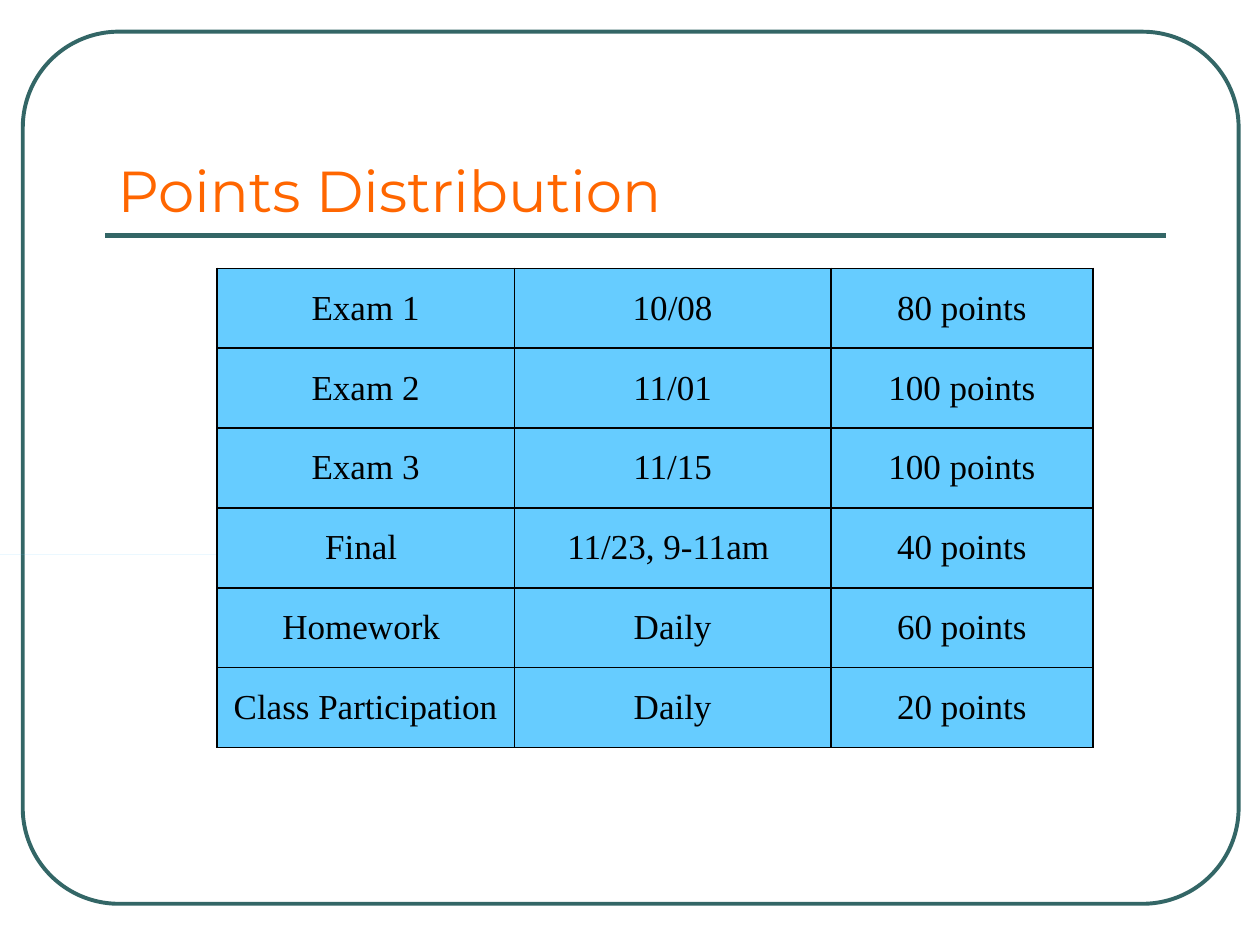
from lxml import etree
from pptx import Presentation
from pptx import util as u
from pptx.dml.color import RGBColor
from pptx.enum import shapes, text
from pptx.oxml.ns import qn

SCORES = [
    ("Exam 1", "10/08", "80 points"),
    ("Exam 2", "11/01", "100 points"),
    ("Exam 3", "11/15", "100 points"),
    ("Final ", "11/23, 9-11am ", "40 points"),
    ("Homework ", "Daily", "60 points"),
    ("Class Participation", "Daily", "20 points"),
]


def colour(hex_code):
    return RGBColor.from_string(hex_code)


class PointsSlide:
    teal, orange, sky, black = "336666", "FF6600", "66CCFF", "000000"
    heading_font, body_font = "Montserrat", "Times New Roman"

    def __init__(self, deck):
        self.slide = deck.slides.add_slide(deck.slide_layouts[6])

    def wording(self, paragraph, words, font, size, hex_code):
        run = paragraph.add_run()
        run.text = words
        run.font.name = font
        run.font.size = u.Pt(size)
        run.font.color.rgb = colour(hex_code)

    def box(self, kind, left, top, width, height):
        outline = self.slide.shapes.add_shape(
            kind, u.Cm(left), u.Cm(top), u.Cm(width), u.Cm(height))
        outline.shadow.inherit = False
        return outline

    def frame(self, left, top, width, height):
        border = self.box(shapes.MSO_SHAPE.ROUNDED_RECTANGLE, left, top, width, height)
        border.adjustments[0] = 0.11
        border.fill.background()
        border.line.color.rgb = colour(self.teal)
        border.line.width = u.Pt(2.25)

    def hairline(self, left, top, width):
        strip = self.box(shapes.MSO_SHAPE.RECTANGLE, left, top, width, 0)
        strip.fill.solid()
        strip.fill.fore_color.rgb = colour(self.sky)
        strip.line.fill.background()

    def rule(self, left, right, y):
        underline = self.slide.shapes.add_connector(
            shapes.MSO_CONNECTOR.STRAIGHT, u.Cm(left), u.Cm(y), u.Cm(right), u.Cm(y))
        underline.line.color.rgb = colour(self.teal)
        underline.line.width = u.Pt(3)
        etree.SubElement(underline._element.spPr, qn("a:effectLst"))

    def title(self, words, left, top, width, height):
        heading = self.slide.shapes.add_textbox(
            u.Cm(left), u.Cm(top), u.Cm(width), u.Cm(height)).text_frame
        heading.word_wrap = True
        heading.vertical_anchor = text.MSO_ANCHOR.BOTTOM
        self.wording(heading.paragraphs[0], words, self.heading_font, 33, self.orange)

    def borders(self, cell):
        properties = cell._tc.get_or_add_tcPr()
        for position, side in enumerate(("lnL", "lnR", "lnT", "lnB")):
            edge = etree.Element(qn(f"a:{side}"), w=str(u.Pt(1)))
            paint = etree.SubElement(edge, qn("a:solidFill"))
            etree.SubElement(paint, qn("a:srgbClr"), val=self.black)
            properties.insert(position, edge)

    def score_cell(self, cell, words):
        cell.fill.solid()
        cell.fill.fore_color.rgb = colour(self.sky)
        cell.vertical_anchor = text.MSO_ANCHOR.MIDDLE
        cell.margin_left = cell.margin_right = 0
        cell.margin_top = cell.margin_bottom = 0
        entry = cell.text_frame.paragraphs[0]
        entry.alignment = text.PP_ALIGN.CENTER
        self.wording(entry, words, self.body_font, 20, self.black)
        self.borders(cell)

    def score_table(self, scores, left, top, widths, row_height):
        grid = self.slide.shapes.add_table(
            len(scores), len(widths), u.Cm(left), u.Cm(top),
            u.Cm(sum(widths)), u.Cm(row_height * len(scores))).table
        grid.first_row = grid.horz_banding = False
        for column, width in zip(grid.columns, widths):
            column.width = u.Cm(width)
        for row, score in zip(grid.rows, scores):
            row.height = u.Cm(row_height)
            for cell, words in zip(row.cells, score):
                self.score_cell(cell, words)


def main():
    deck = Presentation()
    deck.slide_width, deck.slide_height = u.Cm(25.4), u.Cm(19.05)
    points = PointsSlide(deck)
    points.frame(0.46, 0.64, 24.51, 17.58)
    points.rule(2.12, 23.5, 4.75)
    points.title("Points Distribution", 2.12, 1.48, 21.38, 3.17)
    points.hairline(0, 11.18, 11.18)
    points.score_table(SCORES, 4.37, 5.41, (6, 6.38, 5.28), 1.61)
    deck.save("out.pptx")


if __name__ == "__main__":
    main()
